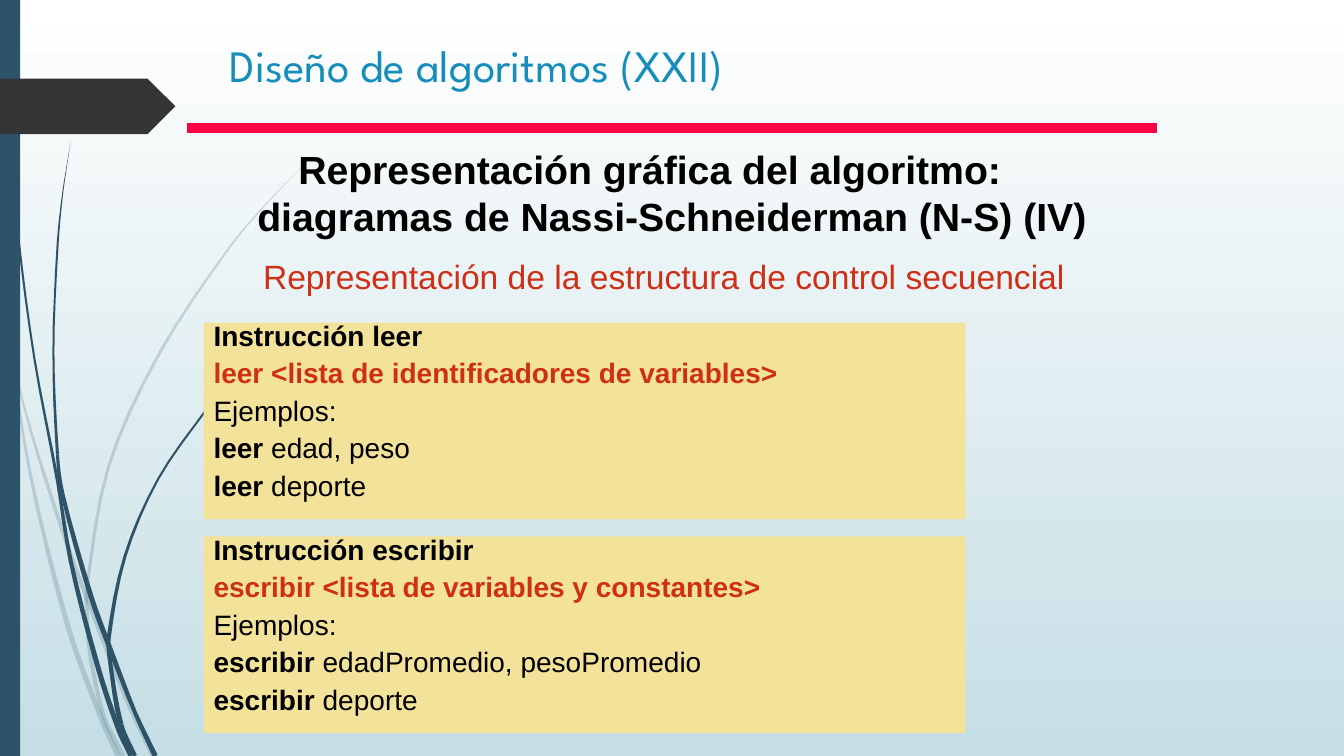
from dataclasses import dataclass
from math import hypot

from lxml.etree import SubElement
from pptx import Presentation
from pptx.dml.color import RGBColor
from pptx.enum.shapes import MSO_SHAPE
from pptx.enum.text import MSO_ANCHOR, PP_ALIGN
from pptx.oxml.ns import qn
from pptx.util import Inches, Pt


@dataclass(frozen=True)
class Theme:
    sky_top = RGBColor.from_string("FFFFFF")
    sky_bottom = RGBColor.from_string("C5DEE5")
    stalk = RGBColor.from_string("2E5369")
    arrow = RGBColor.from_string("353535")
    rule = RGBColor.from_string("F70544")
    panel = RGBColor.from_string("F3E299")
    title = RGBColor.from_string("178DBB")
    text = RGBColor.from_string("000000")
    accent = RGBColor.from_string("CE3016")
    title_font = "League Spartan"
    body_font = "Arial"
    title_size = Pt(32)
    heading_size = Pt(28)
    subheading_size = Pt(24)
    panel_size = Pt(20)


theme = Theme()
presentation = Presentation()
presentation.slide_width = Inches(13.33)
presentation.slide_height = Inches(7.5)
COLUMN = presentation.slide_width / 40
ROW = presentation.slide_height / 30


def grid(left, top, width, height):
    """Turn columns and rows into a left, top, width and height in EMU."""
    return (round(left * COLUMN), round(top * ROW),
            round(width * COLUMN), round(height * ROW))


def add_stalk(shapes, knots, joints, opacity):
    """Draw a smooth ribbon through knots of x, y, thickness, cut at the joint knots."""
    steps = 4
    slopes = [(below[0] - above[0]) / (below[1] - above[1])
              for above, below in zip([knots[0], *knots], [*knots[1:], knots[-1]])]
    curve = []
    for index, ((x0, y0, w0), (x1, y1, w1)) in enumerate(zip(knots, knots[1:])):
        height = y1 - y0
        for step in range(steps):
            t = step / steps
            blend = t * t * (3 - 2 * t)
            bend = t * (1 - t) ** 2 * slopes[index] - t * t * (1 - t) * slopes[index + 1]
            curve.append((x0 + (x1 - x0) * blend + height * bend,
                          y0 + height * t, w0 + (w1 - w0) * t))
    curve.append(knots[-1])
    right_edge, left_edge = [], []
    for index, (x, y, thickness) in enumerate(curve):
        above = curve[max(index - 1, 0)]
        below = curve[min(index + 1, len(curve) - 1)]
        dx, dy = below[0] - above[0], below[1] - above[1]
        half = thickness / 2 / hypot(dx, dy)
        right_edge.append(((x + dy * half) * 1000, (y - dx * half) * 1000))
        left_edge.append(((x - dy * half) * 1000, (y + dx * half) * 1000))
    for start, end in zip([0, *joints], [*joints, len(knots) - 1]):
        piece = slice(start * steps, end * steps + 1)
        outline = right_edge[piece] + left_edge[piece][::-1]
        builder = shapes.build_freeform(*outline[0], scale=Inches(1) / 1000)
        builder.add_line_segments(outline[1:], close=True)
        stalk = builder.convert_to_shape()
        stalk.shadow.inherit = False
        stalk.line.fill.background()
        stalk.fill.solid()
        stalk.fill.fore_color.rgb = theme.stalk
        if opacity < 100:
            color = stalk._element.spPr.find(".//" + qn("a:srgbClr"))
            SubElement(color, qn("a:alpha"), val=str(opacity * 1000))


slide = presentation.slides.add_slide(presentation.slide_layouts[5])
sky = slide.background.fill
sky.gradient()
sky.gradient_angle = 270
for stop, color, position in zip(sky.gradient_stops, (theme.sky_top, theme.sky_bottom), (0, 1)):
    stop.color.rgb = color
    stop.position = position

# Stalks with their joints: pale ones behind, dark ones in front
pale_stalks = [
    ([(0, 2.9, .04), (.11, 3.5, .02), (.3, 4.7, .03), (.67, 6.2, .05),
      (1.01, 7.14, .05), (1.17, 7.5, .05)], [1, 4]),
    ([(.14, 3.45, 0), (.23, 4, .02), (.6, 5.21, .04), (.86, 5.93, .04),
      (1.25, 6.93, .04), (1.52, 7.5, .05)], [3]),
    ([(3.12, 1.53, 0), (2.68, 1.98, .01), (2.28, 2.45, .02), (1.59, 3.49, .03),
      (1.08, 4.62, .03), (.86, 5.84, .03), (.86, 6.05, .04), (.89, 6.46, .04),
      (1.03, 7.11, .04), (1.22, 7.5, .05)], [5, 6, 8]),
]
dark_stalks = [
    ([(.04, 0, .01), (.08, 1.1, .01), (.18, 2.33, .02), (.34, 3.55, .02),
      (.57, 4.77, .03), (.7, 5.56, .04), (.96, 6.58, .05), (1.17, 7.22, .05),
      (1.3, 7.5, .05)], [4, 7]),
    ([(.7, 1.41, 0), (.62, 1.93, .01), (.57, 2.45, .02), (.53, 3.49, .02),
      (.57, 4.51, .03), (.62, 4.9, .04), (.9, 5.91, .05), (1.09, 6.43, .05),
      (1.34, 7.07, .04), (1.54, 7.5, .05)], [4, 5, 7]),
    ([(2.6, 3.44, 0), (2.31, 3.74, .01), (2.05, 4.06, .02), (1.57, 4.75, .02),
      (1.24, 5.52, .03), (1.08, 6.32, .04), (1.09, 6.55, .04), (1.2, 7.19, .05),
      (1.34, 7.5, .04)], [5, 6, 7]),
]
for stalks, opacity in ((pale_stalks, 20), (dark_stalks, 100)):
    for knots, joints in stalks:
        add_stalk(slide.shapes, knots, joints, opacity)

# Side bar, arrow, rule and the two panels
panels = []
for preset, place, color in (
    (MSO_SHAPE.RECTANGLE, grid(0, 0, .6, 30), theme.stalk),
    (MSO_SHAPE.PENTAGON, grid(0, 3.12, 5.22, 2.2), theme.arrow),
    (MSO_SHAPE.RECTANGLE, grid(5.58, 4.92, 28.83, .32), theme.rule),
    (MSO_SHAPE.RECTANGLE, grid(6.06, 12.8, 22.68, 7.8), theme.panel),
    (MSO_SHAPE.RECTANGLE, grid(6.06, 21.28, 22.68, 7.8), theme.panel),
):
    shape = slide.shapes.add_shape(preset, *place)
    shape.shadow.inherit = False
    shape.fill.solid()
    shape.fill.fore_color.rgb = color
    shape.line.fill.background()
    if color == theme.rule:
        shape.line.color.rgb = theme.rule
        shape.line.width = Pt(.75)
    if color == theme.panel:
        panels.append(shape)

title = slide.shapes.title
title.left, title.top, title.width, title.height = grid(6.54, .84, 27.18, 4.08)
title.text_frame.margin_top = Inches(.16)
heading = slide.shapes.add_textbox(*grid(5.58, 5.56, 28.83, 4.12))
subheading = slide.shapes.add_textbox(*grid(5.58, 9.96, 28.35, 2))

# Each paragraph is a list of runs: text, colour, bold
blocks = [
    (title, theme.title_font, theme.title_size, PP_ALIGN.LEFT,
     [[("Diseño de algoritmos (XXII)", theme.title, False)]]),
    (heading, theme.body_font, theme.heading_size, PP_ALIGN.CENTER,
     [[("Representación gráfica del algoritmo: diagramas de Nassi-Schneiderman (N-S) (IV)",
        theme.text, True)]]),
    (subheading, theme.body_font, theme.subheading_size, PP_ALIGN.CENTER,
     [[("Representación de la estructura de control secuencial", theme.accent, False)]]),
]
instructions = [
    ("leer", "lista de identificadores de variables", "edad, peso"),
    ("escribir", "lista de variables y constantes", "edadPromedio, pesoPromedio"),
]
for panel, (keyword, arguments, example) in zip(panels, instructions):
    blocks.append((panel, theme.body_font, theme.panel_size, PP_ALIGN.LEFT, [
        [(f"Instrucción {keyword}", theme.text, True)],
        [(f"{keyword} <{arguments}>", theme.accent, True)],
        [("Ejemplos:", theme.text, False)],
        [(keyword, theme.text, True), (f" {example}", theme.text, False)],
        [(keyword, theme.text, True), (" deporte", theme.text, False)],
    ]))

for shape, font_name, size, alignment, paragraphs in blocks:
    frame = shape.text_frame
    frame.word_wrap = True
    frame.vertical_anchor = MSO_ANCHOR.TOP
    for index, runs in enumerate(paragraphs):
        paragraph = frame.add_paragraph() if index else frame.paragraphs[0]
        paragraph.alignment = alignment
        paragraph.space_before = Pt(10) if index else Pt(0)
        if shape in panels:
            paragraph.line_spacing = .7
        for text, color, bold in runs:
            run = paragraph.add_run()
            run.text = text
            run.font.name = font_name
            run.font.size = size
            run.font.bold = bold
            run.font.color.rgb = color

# A hanging indent sets the first heading line left of the second
heading.text_frame.margin_left, heading.text_frame.margin_right = Inches(.21), Inches(.65)
hanging = heading.text_frame.paragraphs[0]._p.get_or_add_pPr()
hanging.set("marL", str(Inches(.44)))
hanging.set("indent", str(-Inches(.44)))

presentation.save("out.pptx")
